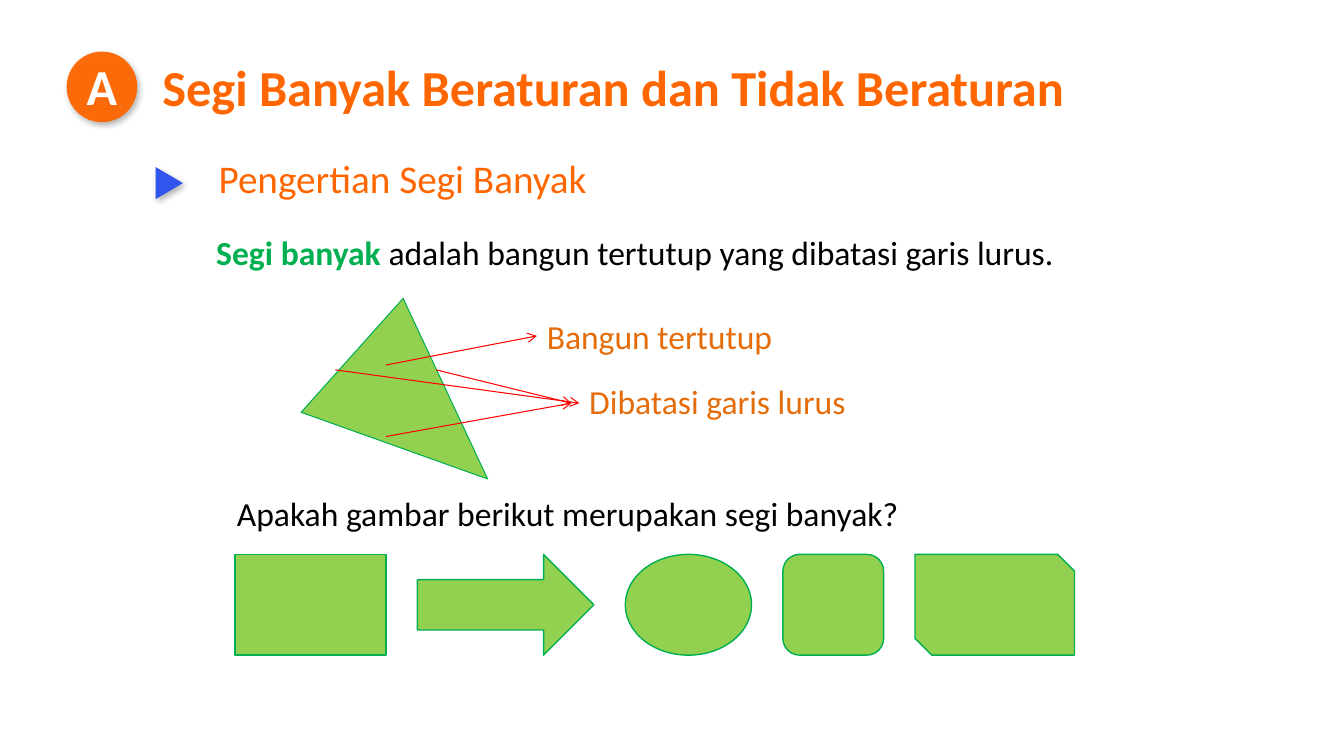
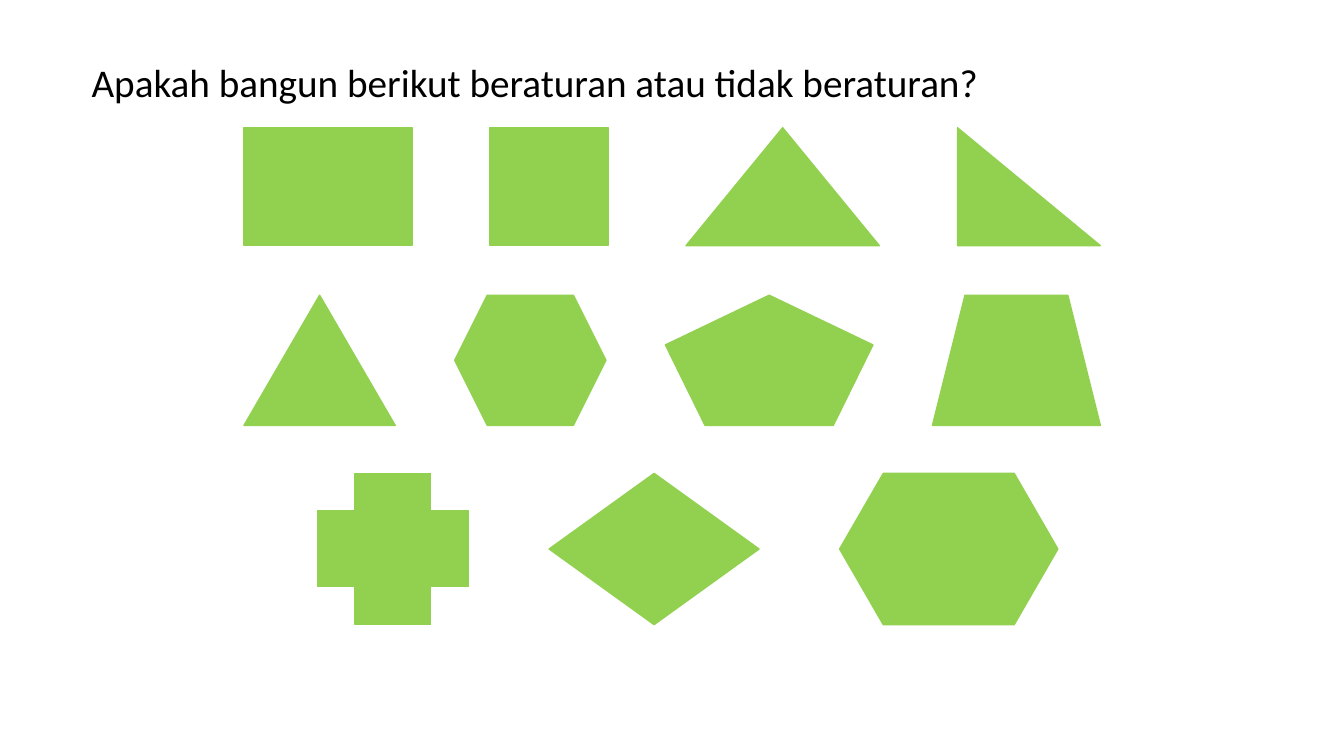
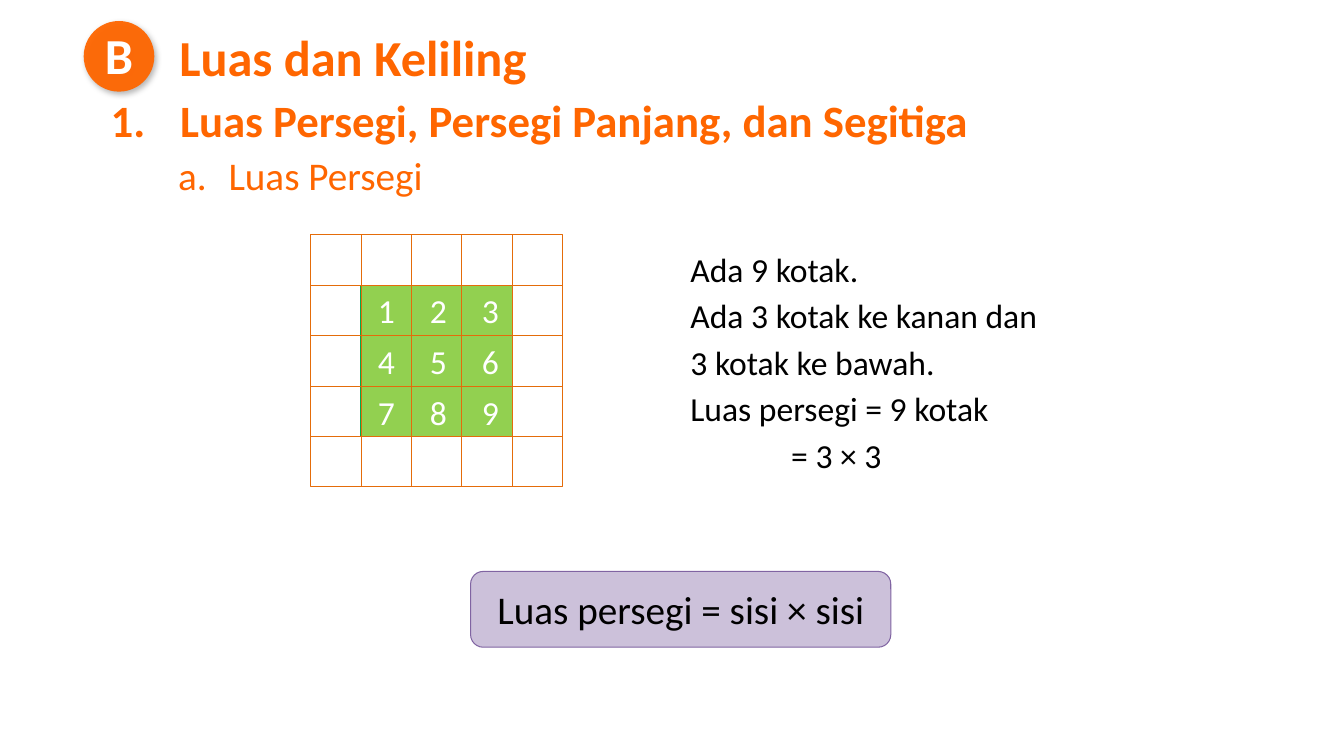
from lxml.etree import SubElement
from pptx import Presentation
from pptx.dml.color import RGBColor
from pptx.enum.shapes import MSO_CONNECTOR, MSO_SHAPE
from pptx.enum.text import MSO_ANCHOR, PP_ALIGN
from pptx.oxml.ns import qn
from pptx.util import Cm, Pt

FONT = "Calibri"
COLORS = {
    "orange": "FF6600",
    "dark_orange": "E46C0A",
    "light_green": "92D050",
    "green": "00B050",
    "red": "FF0000",
    "blue": "3155ED",
    "lilac": "CCC1DA",
    "purple": "8064A2",
    "black": "000000",
    "white": "FFFFFF",
}


def rgb(name):
    return RGBColor.from_string(COLORS[name])


def write_text(frame, text, size=24, color="black", bold=False, align=PP_ALIGN.LEFT,
               tab=None, indent=0, space=0, same_line=False):
    paragraph = frame.paragraphs[-1]
    if paragraph.runs and not same_line:
        paragraph = frame.add_paragraph()
    if not same_line:
        paragraph.alignment = align
        properties = paragraph._p.get_or_add_pPr()
        if space:
            paragraph.space_before = Pt(space)
        if indent:
            properties.set("marL", str(Cm(indent)))
            properties.set("indent", "0")
        if tab:
            tab_list = SubElement(properties, qn("a:tabLst"))
            SubElement(tab_list, qn("a:tab"), pos=str(Cm(tab)), algn="l")
    run = paragraph.add_run()
    run.text = text
    run.font.name = FONT
    run.font.size = Pt(size)
    run.font.bold = bold
    run.font.color.rgb = rgb(color)


def add_label(slide, left, top, width, height, text="", anchor=MSO_ANCHOR.TOP, **style):
    label = slide.shapes.add_textbox(Cm(left), Cm(top), Cm(width), Cm(height))
    label.text_frame.word_wrap = True
    label.text_frame.vertical_anchor = anchor
    if text:
        write_text(label.text_frame, text, **style)
    return label


def paint(shape, fill=None, line=None, weight=1):
    shape.shadow.inherit = False
    if fill:
        shape.fill.solid()
        shape.fill.fore_color.rgb = rgb(fill)
    else:
        shape.fill.background()
    if line:
        shape.line.color.rgb = rgb(line)
        shape.line.width = Pt(weight)
    else:
        shape.line.fill.background()


def add_figure(slide, kind, left, top, width, height, **style):
    shape = slide.shapes.add_shape(kind, Cm(left), Cm(top), Cm(width), Cm(height))
    paint(shape, **style)
    return shape


def add_soft_shadow(shape):
    effects = shape._element.spPr.find(qn("a:effectLst"))
    shadow = SubElement(effects, qn("a:outerShdw"), blurRad=str(Pt(4.5)), dist=str(Pt(2.6)),
                        dir=str(53 * 60000), rotWithShape="0")
    shade = SubElement(shadow, qn("a:srgbClr"), val=COLORS["black"])
    SubElement(shade, qn("a:alpha"), val="30000")


def add_line(slide, start, end, color, arrow=False, target=None):
    line = slide.shapes.add_connector(MSO_CONNECTOR.STRAIGHT, *map(Cm, start + end))
    line.line.color.rgb = rgb(color)
    line.line.width = Pt(0.75)
    if arrow:
        SubElement(line.line._get_or_add_ln(), qn("a:tailEnd"), type="arrow")
    SubElement(line._element.spPr, qn("a:effectLst"))
    if target is not None:
        line.end_connect(target, 1)


def add_section_title(slide, left, top, letter, title):
    diameter = 1.78
    badge = add_figure(slide, MSO_SHAPE.OVAL, left, top, diameter, diameter, fill="orange")
    color = badge._element.spPr.find(qn("a:solidFill")).find(qn("a:srgbClr"))
    SubElement(color, qn("a:alpha"), val="95000")
    add_soft_shadow(badge)
    frame = badge.text_frame
    frame.margin_left = frame.margin_right = frame.margin_top = 0
    frame.margin_bottom = Cm(0.1)
    frame.vertical_anchor = MSO_ANCHOR.MIDDLE
    write_text(frame, letter, size=36, color="white", bold=True, align=PP_ALIGN.CENTER)
    add_label(slide, left + 2.16, top, 23.9, 1.8, title, size=36, color="orange", bold=True)


def add_figure_row(slide, left, top, height, gap, figures, line):
    for kind, width in figures:
        add_figure(slide, kind, left, top, width, height, fill="light_green", line=line)
        left += width + gap


def add_polygon_diagram(slide, left, top):
    def place(x, y):
        return left + x, top + y

    corners = [tuple(map(Cm, place(*corner))) for corner in ((0, 2.87), (2.57, 0), (4.7, 4.55))]
    builder = slide.shapes.build_freeform(*corners[0])
    builder.add_line_segments(corners[1:], close=True)
    paint(builder.convert_to_shape(), fill="light_green", line="green", weight=0.75)

    closed = add_label(slide, *place(5.94, 0.31), 6.78, 1.27, "Bangun tertutup",
                       color="dark_orange")
    straight = add_label(slide, *place(7.01, 1.95), 7.42, 1.38, "Dibatasi garis lurus",
                         color="dark_orange")
    for start, end, target in (
        ((2.13, 1.68), (5.94, 0.94), closed),
        ((0.86, 1.8), (7.01, 2.64), straight),
        ((2.13, 3.48), (6.81, 2.64), None),
        ((3.4, 1.8), (6.81, 2.64), None),
    ):
        add_line(slide, place(*start), place(*end), "red", arrow=True, target=target)


def add_square_grid(slide, left, top, cell=1.27, count=5, filled=3):
    add_figure(slide, MSO_SHAPE.RECTANGLE, left + cell, top + cell, filled * cell, filled * cell,
               fill="light_green", line="green")
    for index in range(filled * filled):
        row, column = divmod(index, filled)
        add_label(slide, left + cell + 0.13 + column * 1.31, top + cell + row * 1.28, 1.02, 1.02,
                  str(index + 1), color="white", align=PP_ALIGN.CENTER)
    side = cell * count
    add_figure(slide, MSO_SHAPE.RECTANGLE, left, top, side, side, line="dark_orange", weight=0.75)
    for step in range(1, count):
        offset = step * cell
        add_line(slide, (left, top + offset), (left + side, top + offset), "dark_orange")
        add_line(slide, (left + offset, top), (left + offset, top + side), "dark_orange")


def add_explanation(slide, left, top):
    frame = add_label(slide, left, top, 9.53, 6.12).text_frame
    write_text(frame, "Ada 9 kotak.")
    for text in ("Ada 3 kotak ke kanan dan", "3 kotak ke bawah.", "Luas persegi = 9 kotak"):
        write_text(frame, text, space=4.3)
    write_text(frame, "= 3 × 3", space=4.3, indent=2.54)


def add_formula(slide, left, top):
    box = add_figure(slide, MSO_SHAPE.ROUNDED_RECTANGLE, left, top, 10.59, 1.91,
                     fill="lilac", line="purple", weight=0.75)
    box.text_frame.vertical_anchor = MSO_ANCHOR.MIDDLE
    write_text(box.text_frame, "Luas persegi = sisi × sisi", size=28, align=PP_ALIGN.CENTER)


def build_definition_slide(slide):
    add_section_title(slide, 1.68, 1.3, "A", "Segi Banyak Beraturan dan Tidak Beraturan")
    marker = add_figure(slide, MSO_SHAPE.ISOSCELES_TRIANGLE, 3.86, 4.27, 0.81, 0.69, fill="blue")
    marker.rotation = 90
    add_soft_shadow(marker)
    add_label(slide, 5.26, 3.76, 10.16, 1.45, "Pengertian Segi Banyak", size=28, color="orange")
    definition = add_label(slide, 5.2, 5.72, 22.2, 1.47, "Segi banyak ", color="green", bold=True)
    write_text(definition.text_frame, "adalah bangun tertutup yang dibatasi garis lurus.",
               same_line=True)
    add_polygon_diagram(slide, 7.59, 7.52)
    add_label(slide, 5.72, 12.3, 18.2, 1.7, "Apakah gambar berikut merupakan segi banyak?")
    add_figure_row(slide, 5.92, 13.97, 2.54, 0.79, (
        (MSO_SHAPE.RECTANGLE, 3.81),
        (MSO_SHAPE.RIGHT_ARROW, 4.45),
        (MSO_SHAPE.OVAL, 3.18),
        (MSO_SHAPE.ROUNDED_RECTANGLE, 2.54),
        (MSO_SHAPE.SNIP_2_DIAG_RECTANGLE, 4.02),
    ), "green")


def build_question_slide(slide):
    add_label(slide, 2.06, 1.27, 23.88, 1.57,
              "Apakah bangun berikut beraturan atau tidak beraturan?",
              anchor=MSO_ANCHOR.MIDDLE, size=28)
    rows = (
        (6.15, 3.22, 2.97, 1.97, (
            (MSO_SHAPE.RECTANGLE, 4.23),
            (MSO_SHAPE.RECTANGLE, 2.97),
            (MSO_SHAPE.ISOSCELES_TRIANGLE, 4.87),
            (MSO_SHAPE.RIGHT_TRIANGLE, 3.6),
        )),
        (6.15, 7.44, 3.28, 1.5, (
            (MSO_SHAPE.ISOSCELES_TRIANGLE, 3.81),
            (MSO_SHAPE.HEXAGON, 3.81),
            (MSO_SHAPE.REGULAR_PENTAGON, 5.23),
            (MSO_SHAPE.TRAPEZOID, 4.23),
        )),
        (8, 11.93, 3.81, 2.03, (
            (MSO_SHAPE.CROSS, 3.81),
            (MSO_SHAPE.FLOWCHART_DECISION, 5.29),
            (MSO_SHAPE.FLOWCHART_PREPARATION, 5.5),
        )),
    )
    for row in rows:
        add_figure_row(slide, *row, "light_green")


def build_area_slide(slide):
    add_section_title(slide, 2.11, 0.53, "B", "Luas dan Keliling")
    add_label(slide, 2.54, 2.21, 22.6, 1.63, "1.\tLuas Persegi, Persegi Panjang, dan Segitiga",
              size=32, color="orange", bold=True, tab=1.75)
    add_label(slide, 4.24, 3.68, 7, 1.45, "a.\tLuas Persegi", size=28, color="orange", tab=1.27)
    add_square_grid(slide, 7.83, 5.92)
    add_explanation(slide, 17.15, 6.15)
    add_formula(slide, 11.86, 14.4)


def main():
    presentation = Presentation()
    presentation.slide_width = Cm(33.87)
    presentation.slide_height = Cm(19.05)
    for build in (build_definition_slide, build_question_slide, build_area_slide):
        build(presentation.slides.add_slide(presentation.slide_layouts[6]))
    presentation.save("out.pptx")


if __name__ == "__main__":
    main()
